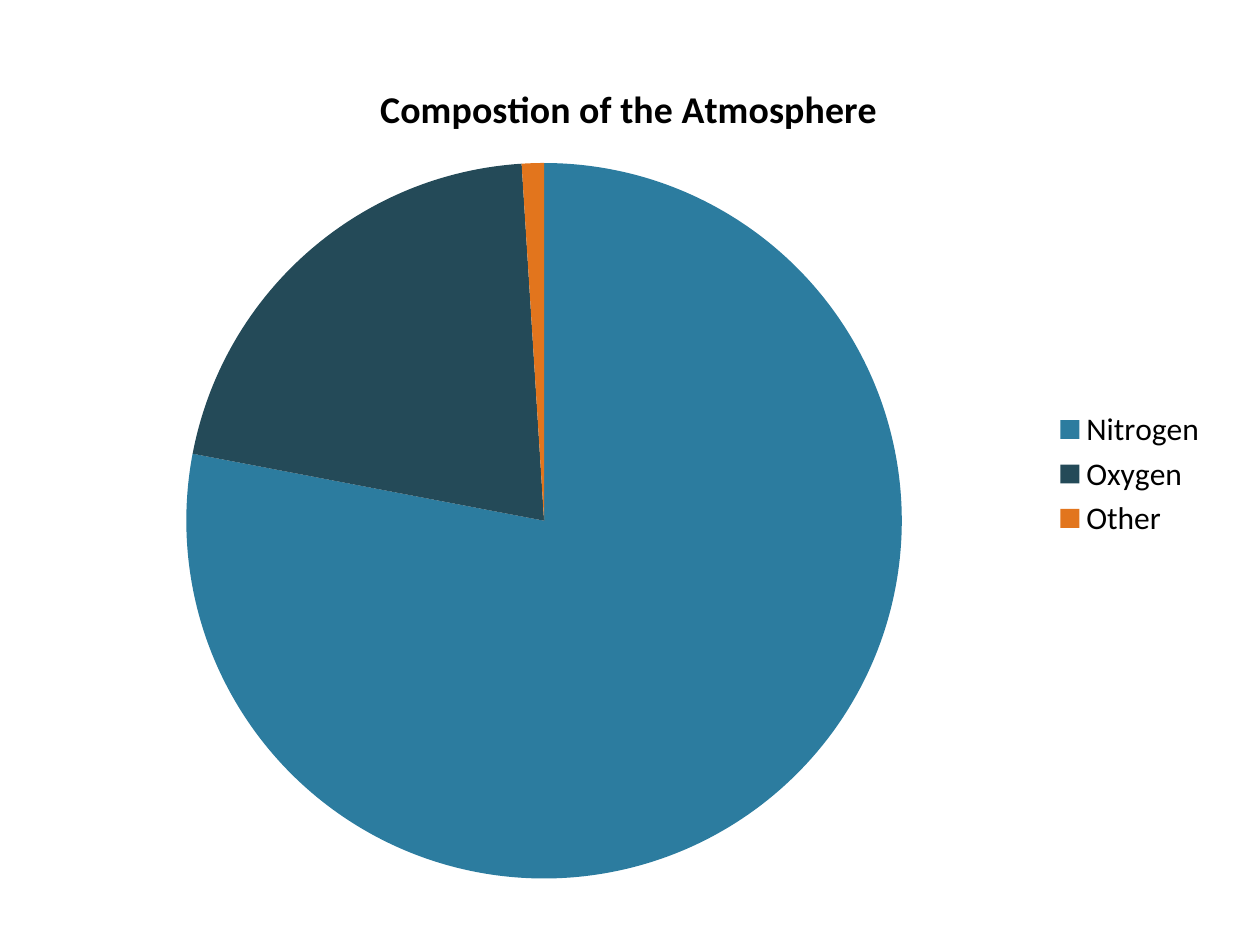
from pptx import Presentation
from pptx.chart.data import CategoryChartData
from pptx.dml.color import RGBColor
from pptx.enum.chart import XL_CHART_TYPE, XL_LEGEND_POSITION
from pptx.util import Emu, Pt

PIE = XL_CHART_TYPE.PIE
RIGHT = XL_LEGEND_POSITION.RIGHT
PX = 914400 // 126

THEME = {
    "font": "Calibri",
    "text": RGBColor.from_string("000000"),
    "body_size": Pt(18),
    "title_size": Pt(21.6),
}
TITLE = "Compostion of the Atmosphere"
GASES = [
    ("Nitrogen", 78, "2C7C9F"),
    ("Oxygen", 21, "244A58"),
    ("Other", 1, "E2751D"),
]

# Deck and blank page
deck = Presentation()
deck.slide_width, deck.slide_height = Emu(1260 * PX), Emu(945 * PX)
page = deck.slides.add_slide(deck.slide_layouts[6])

# Pie chart
data = CategoryChartData()
data.categories = [name for name, share, color in GASES]
data.add_series(TITLE, [share for name, share, color in GASES])
box = [Emu(length * PX) for length in (38, 52, 1182, 844)]
chart = page.shapes.add_chart(PIE, *box, data).chart
plot = chart.plots[0]
plot.vary_by_categories = True

# Slice colours
for index, (name, share, color) in enumerate(GASES):
    fill = plot.series[0].points[index].format.fill
    fill.solid()
    fill.fore_color.rgb = RGBColor.from_string(color)

# Legend
chart.has_legend = True
chart.legend.position = RIGHT
chart.legend.include_in_layout = False

# Title
chart.has_title = True
chart.chart_title.include_in_layout = False
para = chart.chart_title.text_frame.paragraphs[0]
span = para.add_run()
span.text = TITLE

# Type
formats = [
    (chart.font, {"name": THEME["font"], "size": THEME["body_size"]}),
    (span.font, {"name": THEME["font"], "size": THEME["title_size"], "bold": True}),
]
for font, values in formats:
    for attribute, value in values.items():
        setattr(font, attribute, value)
    font.color.rgb = THEME["text"]

deck.save("out.pptx")
